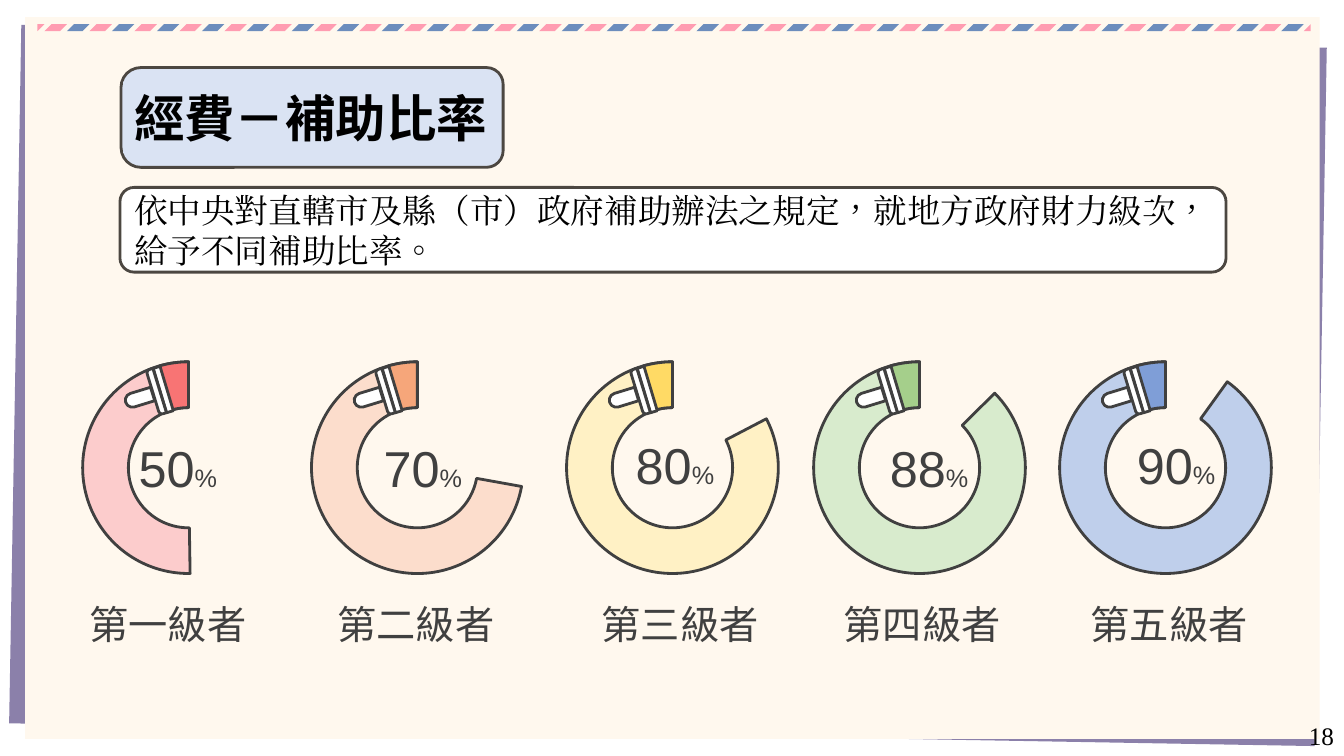
from pptx import Presentation
from pptx.dml.color import RGBColor
from pptx.enum.shapes import MSO_SHAPE as Preset
from pptx.enum.text import MSO_ANCHOR as Anchor, MSO_AUTO_SIZE as AutoSize, PP_ALIGN as Align
from pptx.oxml.ns import qn
from pptx.util import Inches, Pt

TITLE = "經費－補助比率"
RULE = "依中央對直轄市及縣（市）政府補助辦法之規定，就地方政府財力級次，給予不同補助比率。"
PAGE_NUMBER = "18"
LEVELS = [
    # label, percent, ring left, arc start, light, dark, percent box, label left
    ("第一級者", "50", 0.82, 89.14, "FCCCCC", "F87474", (1.18, 4.29), 0.69),
    ("第二級者", "70", 3.09, 10.22, "FCDDCC", "F6A67A", (3.61, 4.29), 3.15),
    ("第三級者", "80", 5.62, 332.51, "FFF1C5", "FFDA65", (6.11, 4.26), 5.77),
    ("第四級者", "88", 8.07, 315.26, "D8EBCD", "A5CF8B", (8.63, 4.29), 8.17),
    ("第五級者", "90", 10.51, 305.72, "BFCFEB", "7F9ED7", (11.08, 4.26), 10.62),
]
CLIP_PARTS = [
    (Preset.RECTANGLE, (0.57, 0.24, 0.46, 0.07), 73.3, ()),
    (Preset.ROUND_2_SAME_RECTANGLE, (0.5, 0.26, 0.46, 0.07), 73, (0, 0.5)),
    (Preset.ROUND_2_SAME_RECTANGLE, (0.49, 0.22, 0.14, 0.28), 73, (0, 0.5)),
]
PINK, BLUE, CREAM, PURPLE = "FF9CB1", "6C8DBD", "FFF8EE", "8B80AA"
PALE_BLUE, WHITE, BLACK, GREY, BROWN = "DAE3F3", "FFFFFF", "000000", "404040", "4C4741"
CJK, SERIF, SANS = "Noto Sans CJK SC", "Times New Roman", "Arial"
RING_TOP, RING_SIZE, RING_THICKNESS = 3.59, 2.1, 0.216
CAP_START, ARC_END = 253.96, 270.01
STRIPE_COUNT, STRIPE_LEFT, STRIPE_TOP, STRIPE_END = 56, 0.44, 0.24, 12.93
STRIPE_HEIGHT = 0.07


def color(value):
    return RGBColor.from_string(value)


def add_shape(preset, box, fill, line=None, rotation=0, adjustments=()):
    shape = slide.shapes.add_shape(preset, *map(Inches, box))
    shape.shadow.inherit = False
    shape.rotation = rotation
    for index, value in enumerate(adjustments):
        shape.adjustments[index] = value
    shape.fill.solid()
    shape.fill.fore_color.rgb = color(fill)
    if line:
        shape.line.color.rgb = color(line)
        shape.line.width = Pt(2)
    else:
        shape.line.fill.background()
    return shape


def format_run(run, size, font, text_color, bold=False):
    run.font.size = Pt(size)
    run.font.name = font
    run.font.bold = bold
    run.font.color.rgb = color(text_color)
    properties = run._r.get_or_add_rPr()
    properties.set("lang", "zh-TW")
    east_asian = properties.makeelement(qn("a:ea"), {"typeface": font})
    properties.find(qn("a:latin")).addnext(east_asian)


def write(shape, text, size, font, text_color, align, anchor=Anchor.TOP, bold=False):
    frame = shape.text_frame
    frame.text = text
    frame.word_wrap = True
    frame.auto_size = AutoSize.NONE
    frame.vertical_anchor = anchor
    paragraph = frame.paragraphs[0]
    paragraph.alignment = align
    format_run(paragraph.runs[0], size, font, text_color, bold)
    return paragraph


def add_text(box, *style, **options):
    return write(slide.shapes.add_textbox(*map(Inches, box)), *style, **options)


def add_ring(left, start, fill):
    add_shape(Preset.BLOCK_ARC, (left, RING_TOP, RING_SIZE, RING_SIZE), fill, GREY,
              adjustments=(start * 0.6, ARC_END * 0.6, RING_THICKNESS))


def add_stripes():
    pitch = (STRIPE_END - STRIPE_LEFT) / STRIPE_COUNT
    for index in range(STRIPE_COUNT):
        box = (STRIPE_LEFT + index * pitch, STRIPE_TOP, pitch, STRIPE_HEIGHT)
        add_shape(Preset.PARALLELOGRAM, box, BLUE if index % 2 else PINK, adjustments=(1,))
    for left, rotation in ((STRIPE_LEFT - STRIPE_HEIGHT, 90), (STRIPE_END, 270)):
        box = (left, STRIPE_TOP, STRIPE_HEIGHT, STRIPE_HEIGHT)
        add_shape(Preset.RIGHT_TRIANGLE, box, PINK, rotation=rotation)


def add_title():
    add_shape(Preset.ROUND_2_SAME_RECTANGLE, (2.6, -0.73, 0.99, 3.79), PALE_BLUE, BROWN,
              90, (0.167, 0.199))
    title = slide.shapes.title
    title.left, title.top, title.width, title.height = map(Inches, (1.22, 0.81, 3.72, 0.71))
    title.fill.solid()
    title.fill.fore_color.rgb = color(PALE_BLUE)
    write(title, TITLE, 36, CJK, BLACK, Align.CENTER, bold=True)
    slide.shapes._spTree.append(title._element)


def add_gauge(label, percent, left, start, light, dark, percent_at, label_left):
    add_ring(left, start, light)
    add_ring(left, CAP_START, dark)
    for preset, (dx, dy, width, height), rotation, adjustments in CLIP_PARTS:
        box = (left + dx, RING_TOP + dy, width, height)
        add_shape(preset, box, WHITE, GREY, rotation, adjustments)
    paragraph = add_text((*percent_at, 1.17, 0.71), percent, 36, SANS, GREY, Align.CENTER)
    sign = paragraph.add_run()
    sign.text = "%"
    format_run(sign, 18, SANS, GREY)
    add_text((label_left, 5.91, 1.95, 0.57), label, 28, CJK, GREY, Align.CENTER)


presentation = Presentation()
presentation.slide_width, presentation.slide_height = Inches(13.33), Inches(7.5)
slide = presentation.slides.add_slide(presentation.slide_layouts[5])

add_shape(Preset.RECTANGLE, (0.15, 0.36, 12.95, 6.93), PURPLE, rotation=1)
add_shape(Preset.RECTANGLE, (0.25, 0.17, 12.84, 7.16), CREAM)
add_stripes()
rule_box = add_shape(Preset.ROUNDED_RECTANGLE, (1.19, 1.86, 10.97, 0.84), WHITE, BROWN)
write(rule_box, RULE, 24, SERIF, BLACK, Align.LEFT, Anchor.MIDDLE)
add_title()
for level in LEVELS:
    add_gauge(*level)
add_text((10.33, 7.1, 3, 0.4), PAGE_NUMBER, 18, SERIF, BLACK, Align.RIGHT, Anchor.MIDDLE)

presentation.save("out.pptx")
